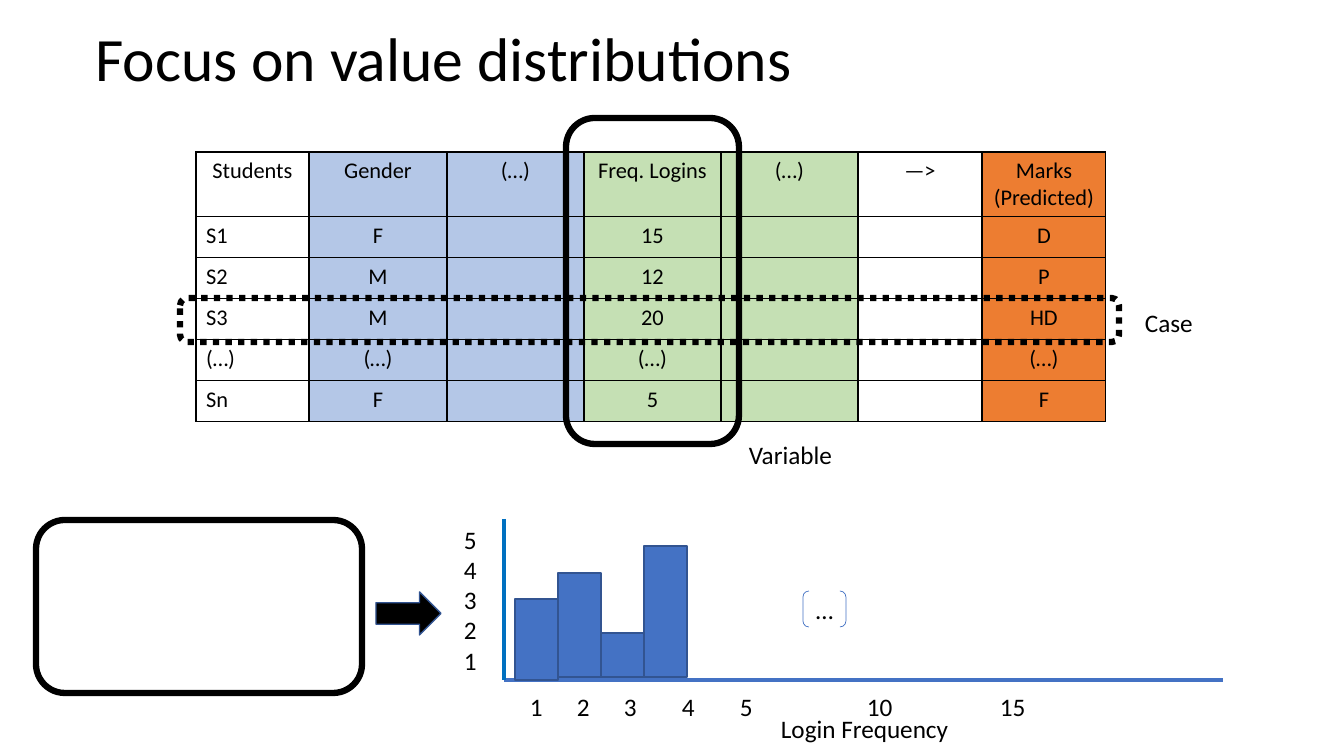
from lxml import etree
from pptx import Presentation
from pptx import util as u
from pptx.dml.color import RGBColor
from pptx.enum import dml, shapes, text
from pptx.oxml import ns

EMU_PER_PX = u.Inches(1) / 100.8
FONT = "Calibri"
COLORS = {
    "black": "000000", "white": "FFFFFF", "nominal": "B4C7E7", "numeric": "C5E0B4",
    "target": "ED7D31", "bar": "4472C4", "bar_edge": "325491", "y_axis": "0070C0",
}
COLUMNS = [  # width, fill
    (113, "white"), (138, "nominal"), (137, "nominal"), (137, "numeric"),
    (137, "numeric"), (124, "white"), (124, "target"),
]
ROWS = [
    ["Students", "Gender", "(…)", "Freq. Logins", "(…)", "—>", "Marks (Predicted)"],
    ["S1", "F", "", "15", "", "", "D"],
    ["S2", "M", "", "12", "", "", "P"],
    ["S3", "M", "", "20", "", "", "HD"],
    ["(…)", "(…)", "", "(…)", "", "", "(…)"],
    ["Sn", "F", "", "5", "", "", "F"],
]
BARS = [(80, 81), (54, 104), (114, 44), (27, 131)]  # top, height
TICKS = [("1", 0), ("2", 47), ("3", 94), ("4", 152), ("5", 210), ("10", 337), ("15", 470)]


def px(length):
    return u.Emu(round(length * EMU_PER_PX))


def rgb(name):
    return RGBColor.from_string(COLORS[name])


def format_text(frame, size, align=text.PP_ALIGN.LEFT):
    for para in frame.paragraphs:
        para.alignment = align
        for span in para.runs:
            span.font.name = FONT
            span.font.size = u.Pt(size)
            span.font.color.rgb = rgb("black")


def add_label(page, words, left, top, width, height):
    box = page.shapes.add_textbox(px(left), px(top), px(width), px(height))
    box.text_frame.word_wrap = True
    box.text_frame.text = words
    format_text(box.text_frame, 18)
    return box


def add_figure(page, kind, left, top, width, height, line, weight, fill=None):
    figure = page.shapes.add_shape(kind, px(left), px(top), px(width), px(height))
    figure.shadow.inherit = False
    if fill:
        figure.fill.solid()
        figure.fill.fore_color.rgb = rgb(fill)
    else:
        figure.fill.background()
    figure.line.color.rgb = rgb(line)
    figure.line.width = u.Pt(weight)
    return figure


def add_frame(page, left, top, width, height):
    return add_figure(page, shapes.MSO_SHAPE.ROUNDED_RECTANGLE,
                      left, top, width, height, "black", 4.5)


def add_axis(page, start, end, color):
    axis = page.shapes.add_connector(shapes.MSO_CONNECTOR.STRAIGHT,
                                     *(px(value) for value in start + end))
    axis.line.color.rgb = rgb(color)
    axis.line.width = u.Pt(3)
    etree.SubElement(axis._element.spPr, ns.qn("a:effectLst"))


def set_title(page, left, top, width, height):
    title = page.shapes.title
    title.left, title.top, title.width, title.height = map(px, (left, top, width, height))
    frame = title.text_frame
    frame.text = "Focus on value distributions"
    frame.vertical_anchor = text.MSO_ANCHOR.MIDDLE
    frame.paragraphs[0].line_spacing = 0.9
    format_text(frame, 44)


def fill_cell(cell, words, fill, align):
    cell.fill.solid()
    cell.fill.fore_color.rgb = rgb(fill)
    cell.text_frame.text = words
    format_text(cell.text_frame, 16, align)
    properties = cell._tc.get_or_add_tcPr()
    for position, side in enumerate(("lnL", "lnR", "lnT", "lnB")):
        border = etree.Element(ns.qn(f"a:{side}"), w=str(u.Pt(1)))
        paint = etree.SubElement(border, ns.qn("a:solidFill"))
        etree.SubElement(paint, ns.qn("a:srgbClr"), val=COLORS["black"])
        properties.insert(position, border)


def add_data_table(page, left, top, width, height):
    row_height = 41
    header_height = height - row_height * (len(ROWS) - 1)
    table = page.shapes.add_table(len(ROWS), len(COLUMNS), px(left), px(top),
                                  px(width), px(height)).table
    table.first_row = table.horz_banding = False
    for column, (column_width, _) in zip(table.columns, COLUMNS):
        column.width = px(column_width)
    for r, row in enumerate(ROWS):
        table.rows[r].height = px(row_height if r else header_height)
        for c, words in enumerate(row):
            align = text.PP_ALIGN.LEFT if r and not c else text.PP_ALIGN.CENTER
            fill_cell(table.cell(r, c), words, COLUMNS[c][1], align)


def mark_case_and_variable(page, left, top, width):
    """Frame one row and one column of the table whose box is given."""
    case = add_frame(page, left - 16, top + 146, width + 29, 44)
    case.line.dash_style = dml.MSO_LINE.ROUND_DOT
    add_label(page, "Case", left + width + 29, top + 150, 143, 41)
    add_frame(page, left + 370, top - 34, 173, 326)
    add_label(page, "Variable", left + 543, top + 282, 167, 41)


def add_tick_labels(page, left, top, width, height):
    box = add_label(page, "\t".join(words for words, _ in TICKS), left, top, width, height)
    properties = box.text_frame.paragraphs[0]._p.get_or_add_pPr()
    stops = etree.SubElement(properties, ns.qn("a:tabLst"))
    for _, offset in TICKS[1:]:
        etree.SubElement(stops, ns.qn("a:tab"), pos=str(px(offset)), algn="l")


def add_histogram(page, left, top, width, height):
    """Draw login counts; the box is bounded by the two axes."""
    bottom = top + height
    add_axis(page, (left, bottom), (left + width, bottom), "bar")
    add_axis(page, (left, top), (left, bottom), "y_axis")
    bar_width = 43
    for index, (bar_top, bar_height) in enumerate(BARS):
        add_figure(page, shapes.MSO_SHAPE.RECTANGLE, left + 11 + index * bar_width,
                   top + bar_top, bar_width, bar_height, "bar_edge", 1, "bar")
    more = add_figure(page, shapes.MSO_SHAPE.DOUBLE_BRACKET,
                      left + 299, top + 72, bar_width, 36, "bar", 0.5)
    more.text_frame.text = "…"
    more.text_frame.vertical_anchor = text.MSO_ANCHOR.MIDDLE
    format_text(more.text_frame, 18, text.PP_ALIGN.CENTER)
    add_label(page, "5\n4\n3\n2\n1", left - 50, top, 50, 163)
    add_tick_labels(page, left + 16, bottom + 6, 704, 41)
    add_label(page, "Login Frequency", left + 267, bottom + 28, 278, 41)


def main():
    deck = Presentation()
    deck.slide_width, deck.slide_height = px(1344), px(756)
    page = deck.slides.add_slide(deck.slide_layouts[5])
    set_title(page, 85, -11, 1159, 146)
    add_data_table(page, 196, 152, 910, 269)
    mark_case_and_variable(page, 196, 152, 910)
    add_frame(page, 36, 520, 326, 173)
    add_figure(page, shapes.MSO_SHAPE.RIGHT_ARROW, 376, 592, 65, 43, "bar_edge", 1, "black")
    add_histogram(page, 504, 519, 719, 161)
    deck.save("out.pptx")


if __name__ == "__main__":
    main()
